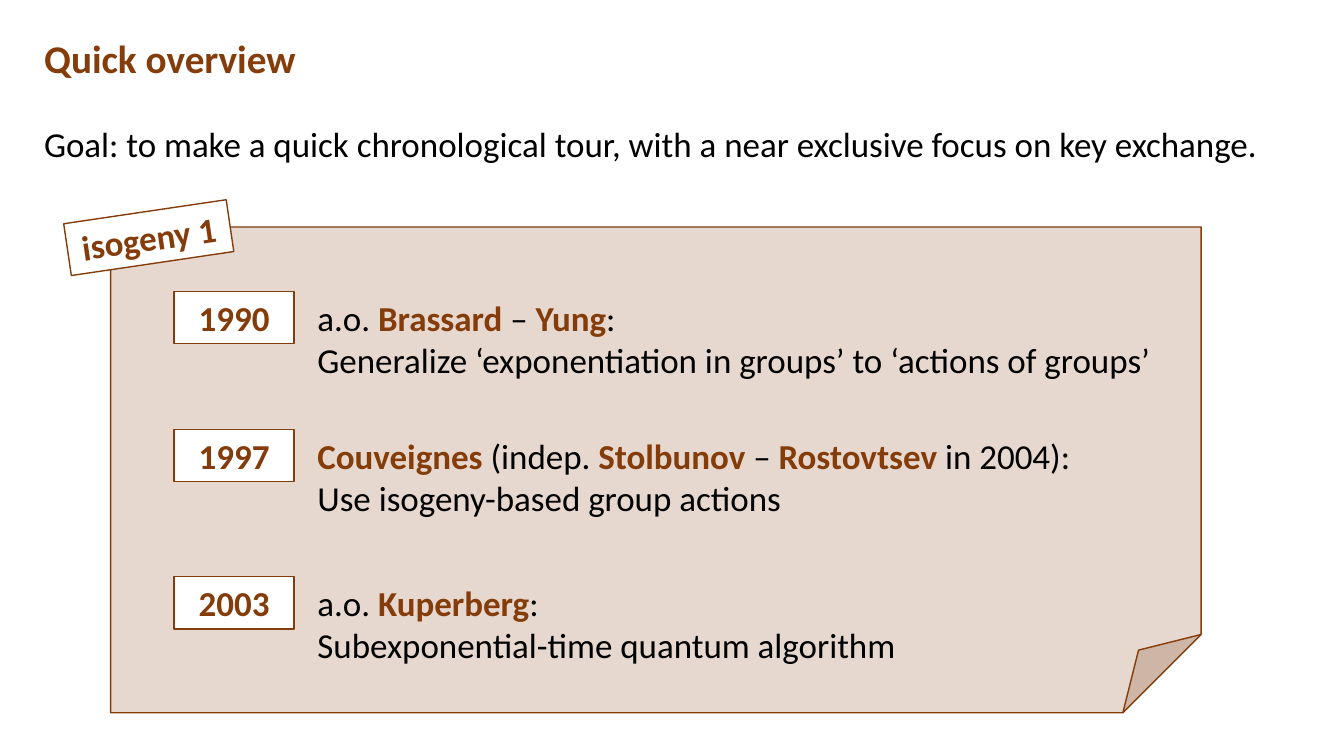
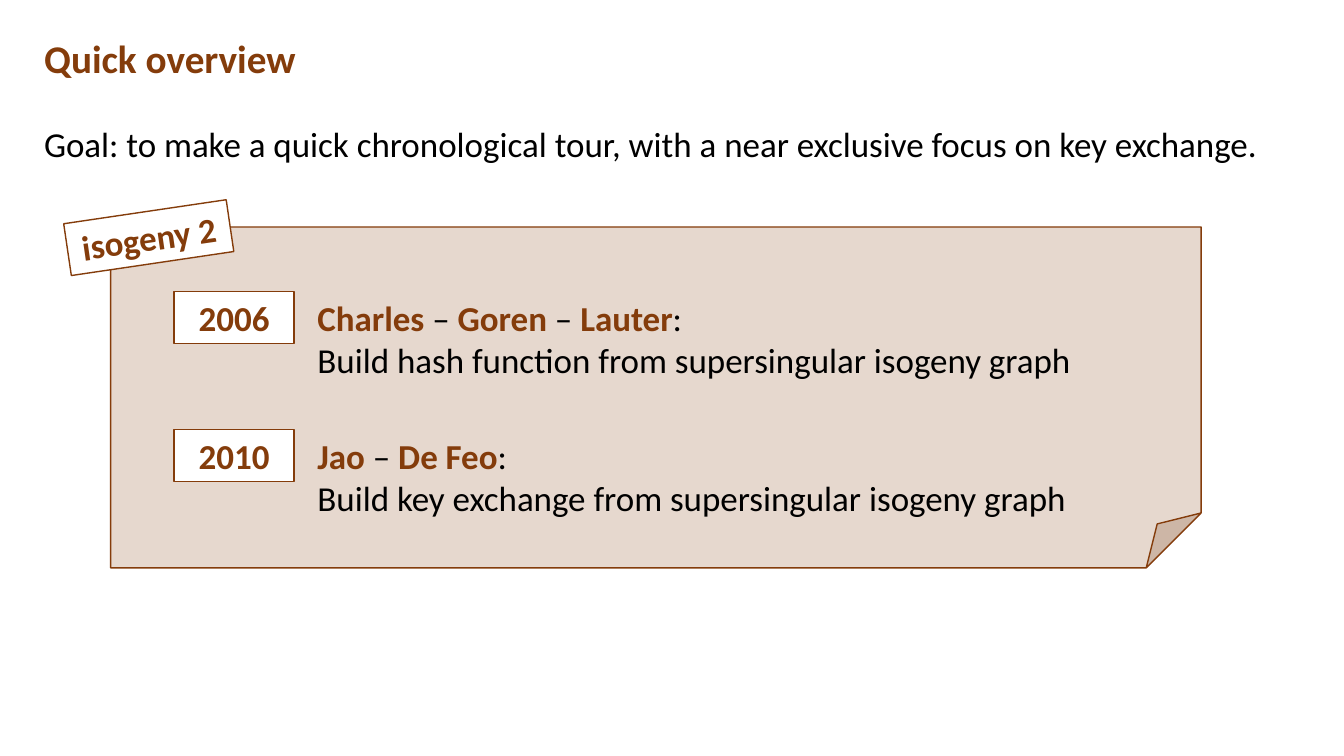
import pptx
import pptx.dml.color
import pptx.enum.shapes
import pptx.enum.text
import pptx.oxml.ns
import pptx.util
import lxml.etree
from dataclasses import dataclass
from typing import Any

Cm = pptx.util.Cm
Pt = pptx.util.Pt
RGB = pptx.dml.color.RGBColor
Shapes = pptx.enum.shapes.MSO_SHAPE
Align = pptx.enum.text.PP_ALIGN
qn = pptx.oxml.ns.qn


@dataclass(frozen=True)
class Theme:
    font: str = "Calibri"
    brown: RGB = RGB(0x84, 0x3C, 0x0B)
    black: RGB = RGB(0, 0, 0)
    white: RGB = RGB(255, 255, 255)
    title_size: float = 28
    body_size: float = 25
    line_width: float = 1
    panel_opacity: int = 20000  # thousandths of a percent
    fold: int = 16100  # thousandths of a percent of the short side


@dataclass(frozen=True)
class Box:
    left: float
    top: float
    width: float
    height: float

    def lengths(self) -> list[int]:
        return [Cm(value) for value in (self.left, self.top, self.width, self.height)]


@dataclass(frozen=True)
class Milestone:
    year: str
    people: str  # names between asterisks are emphasised
    result: str


@dataclass(frozen=True)
class Chapter:
    tag: str
    panel_height: float
    milestones: tuple[Milestone, ...]


THEME = Theme()

# Shared wording and layout, in centimetres
TITLE = "Quick overview"
GOAL = "Goal: to make a quick chronological tour, with a near exclusive focus on key exchange."
TITLE_BOX = Box(0.86, 0.74, 17.98, 1.45)
GOAL_BOX = Box(0.86, 2.97, 32.2, 1.32)
TAG_BOX = Box(1.68, 5.33, 4.14, 1.32)
TAG_ROTATION = -8.4
PANEL_LEFT, PANEL_TOP, PANEL_WIDTH = 2.79, 5.72, 27.48
ROW_TOPS = (7.34, 10.82, 14.53)

CHAPTERS = (
    Chapter("isogeny 1", 12.24, (
        Milestone("1990", "a.o. *Brassard* – *Yung*:",
                  "Generalize ‘exponentiation in groups’ to ‘actions of groups’"),
        Milestone("1997", "*Couveignes* (indep. *Stolbunov* – *Rostovtsev* in 2004):",
                  "Use isogeny-based group actions"),
        Milestone("2003", "a.o. *Kuperberg*:",
                  "Subexponential-time quantum algorithm"),
    )),
    Chapter("isogeny 2", 8.59, (
        Milestone("2006", "*Charles* – *Goren* – *Lauter*:",
                  "Build hash function from supersingular isogeny graph"),
        Milestone("2010", "*Jao* – *De Feo*:",
                  "Build key exchange from supersingular isogeny graph"),
    )),
)


def apply(target: Any, values: dict[str, Any]) -> None:
    for name, value in values.items():
        setattr(target, name, value)


def write(shape: Any, lines: list[str], align: Any = Align.LEFT,
          size: float = THEME.body_size) -> None:
    """Fill a shape with paragraphs; text between asterisks is bold brown."""
    frame = shape.text_frame
    apply(frame, {
        "word_wrap": True,
        "auto_size": pptx.enum.text.MSO_AUTO_SIZE.NONE,
        "vertical_anchor": pptx.enum.text.MSO_ANCHOR.TOP,
    })
    for index, line in enumerate(lines):
        para = frame.add_paragraph() if index else frame.paragraphs[0]
        para.alignment = align
        for part, words in enumerate(line.split("*")):
            if not words:
                continue
            strong = part % 2 == 1
            span = para.add_run()
            span.text = words
            apply(span.font, {"name": THEME.font, "size": Pt(size), "bold": strong})
            span.font.color.rgb = THEME.brown if strong else THEME.black


def add_outlined(page: Any, kind: Any, box: Box, fill: RGB) -> Any:
    shape = page.shapes.add_shape(kind, *box.lengths())
    shape.shadow.inherit = False
    shape.fill.solid()
    shape.fill.fore_color.rgb = fill
    shape.line.color.rgb = THEME.brown
    shape.line.width = Pt(THEME.line_width)
    return shape


def add_panel(page: Any, height: float) -> None:
    box = Box(PANEL_LEFT, PANEL_TOP, PANEL_WIDTH, height)
    panel = add_outlined(page, Shapes.FOLDED_CORNER, box, THEME.brown)
    # Fold size and fill transparency
    guides = next(panel.element.iter(qn("a:avLst")))
    lxml.etree.SubElement(guides, qn("a:gd"), name="adj", fmla=f"val {THEME.fold}")
    fill_color = next(panel.element.iter(qn("a:srgbClr")))
    lxml.etree.SubElement(fill_color, qn("a:alpha"), val=str(THEME.panel_opacity))


def add_label(page: Any, box: Box, text: str, rotation: float = 0) -> None:
    label = add_outlined(page, Shapes.RECTANGLE, box, THEME.white)
    label.rotation = rotation
    write(label, [f"*{text}*"], Align.CENTER)


def add_text(page: Any, box: Box, lines: list[str]) -> None:
    write(page.shapes.add_textbox(*box.lengths()), lines)


def add_milestone(page: Any, top: float, milestone: Milestone) -> None:
    add_label(page, Box(4.39, top, 3.02, 1.32), milestone.year)
    add_text(page, Box(7.75, top, 25.5, 2.4), [milestone.people, milestone.result])


def add_chapter(deck: Any, chapter: Chapter) -> None:
    page = deck.slides.add_slide(deck.slide_layouts[5])  # title only

    # Heading
    title = page.shapes.title
    apply(title, dict(zip(("left", "top", "width", "height"), TITLE_BOX.lengths())))
    write(title, [f"*{TITLE}*"], size=THEME.title_size)
    add_text(page, GOAL_BOX, [GOAL])

    # Panel with its tag and milestones
    add_panel(page, chapter.panel_height)
    add_label(page, TAG_BOX, chapter.tag, TAG_ROTATION)
    for top, milestone in zip(ROW_TOPS, chapter.milestones):
        add_milestone(page, top, milestone)


def main() -> None:
    deck = pptx.Presentation()
    apply(deck, {"slide_width": Cm(33.87), "slide_height": Cm(19.05)})
    for chapter in CHAPTERS:
        add_chapter(deck, chapter)
    deck.save("out.pptx")


if __name__ == "__main__":
    main()
